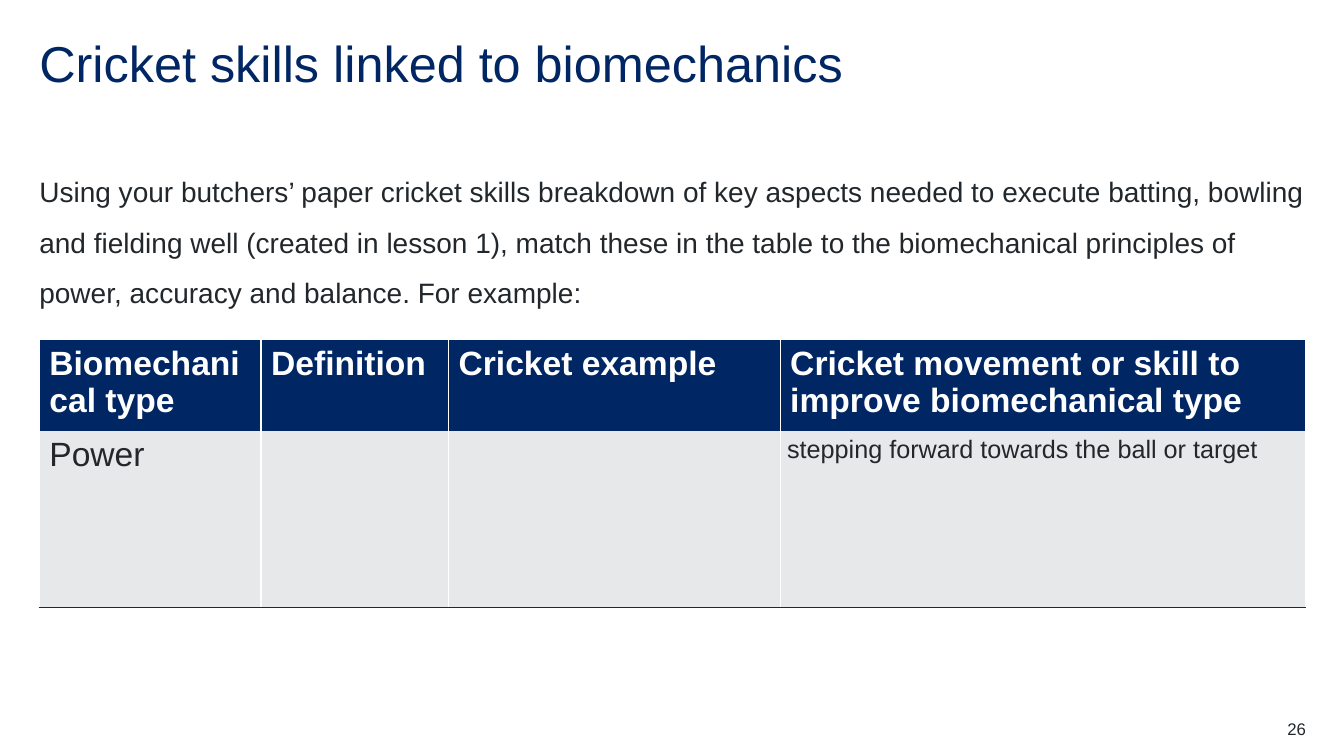
from lxml import etree
from pptx import Presentation
from pptx.dml.color import RGBColor
from pptx.enum.text import PP_ALIGN
from pptx.oxml.ns import qn
from pptx.util import Pt

LEFT, RIGHT = PP_ALIGN.LEFT, PP_ALIGN.RIGHT
NAVY = RGBColor(0x00, 0x26, 0x64)
INK = RGBColor(0x22, 0x27, 0x2B)
GREY = RGBColor(0xE7, 0xE8, 0xEA)
WHITE = RGBColor(0xFF, 0xFF, 0xFF)
NO_STYLE = "{2D5ABB26-0587-4C30-8999-92F81FD0307C}"
MARGIN, WIDTH = 28.1, 904.4


def write(tf, text, size, color=INK, bold=False, align=LEFT,
          spacing=None, before=None, after=None, inset=0):
    tf.word_wrap = True
    if inset is not None:
        tf.margin_left = tf.margin_right = Pt(inset)
        tf.margin_top = tf.margin_bottom = 0
    p = tf.paragraphs[0]
    p.alignment = align
    p.line_spacing = spacing
    if before is not None:
        p.space_before = Pt(before)
    if after is not None:
        p.space_after = Pt(after)
    r = p.add_run()
    r.text = text
    r.font.name = "Arial"
    r.font.size = Pt(size)
    r.font.bold = bold
    r.font.color.rgb = color


def add_border(cell, side, color):
    ln = etree.SubElement(cell._tc.get_or_add_tcPr(), qn(f"a:ln{side}"), w=str(Pt(1)))
    fill = etree.SubElement(ln, qn("a:solidFill"))
    etree.SubElement(fill, qn("a:srgbClr"), val=str(color))


prs = Presentation()
prs.slide_width, prs.slide_height = Pt(960), Pt(540)
s = prs.slides.add_slide(prs.slide_layouts[6])

# Title, task and page number
TASK = ("Using your butchers’ paper cricket skills breakdown of key aspects needed to "
        "execute batting, bowling and fielding well (created in lesson 1), match these "
        "in the table to the biomechanical principles of power, accuracy and balance. "
        "For example:")
for left, top, width, height, text, style in [
    (MARGIN, 28.1, WIDTH, 43.2, "Cricket skills linked to biomechanics",
     dict(size=36, color=NAVY, spacing=0.9)),
    (MARGIN, 113, WIDTH, 110.2, TASK, dict(size=20, spacing=1.5, after=12)),
    (876, 513.4, 56.9, 14.4, "26", dict(size=12, align=RIGHT)),
]:
    box = s.shapes.add_textbox(Pt(left), Pt(top), Pt(width), Pt(height))
    write(box.text_frame, text, **style)

# Table frame
COLUMNS = [158.4, 133.9, 236.9, 375.2]
ROWS = [65.5, 126]
frame = s.shapes.add_table(len(ROWS), len(COLUMNS), Pt(MARGIN), Pt(242.6),
                           Pt(sum(COLUMNS)), Pt(sum(ROWS)))
table = frame.table
table.horz_banding = False
table._tbl.tblPr.find(qn("a:tableStyleId")).text = NO_STYLE
for column, width in zip(table.columns, COLUMNS):
    column.width = Pt(width)
for row, height in zip(table.rows, ROWS):
    row.height = Pt(height)

# Cell borders and fills
for i, row in enumerate(table.rows):
    for cell in row.cells:
        add_border(cell, "L", WHITE)
        add_border(cell, "R", WHITE)
        if i == 1:
            add_border(cell, "B", INK)
        cell.fill.solid()
        cell.fill.fore_color.rgb = GREY if i else NAVY

# Cell text
HEADINGS = ["Biomechanical type", "Definition", "Cricket example",
            "Cricket movement or skill to improve biomechanical type"]
for j, heading in enumerate(HEADINGS):
    write(table.cell(0, j).text_frame, heading, 24, WHITE, bold=True, inset=None)
write(table.cell(1, 0).text_frame, "Power", 24, inset=None)
skill = table.cell(1, 3)
skill.margin_left = skill.margin_right = Pt(5)
skill.margin_top = skill.margin_bottom = 0
write(skill.text_frame, "stepping forward towards the ball or target", 18,
      spacing=1.15, before=12, after=6, inset=None)

prs.save("out.pptx")
